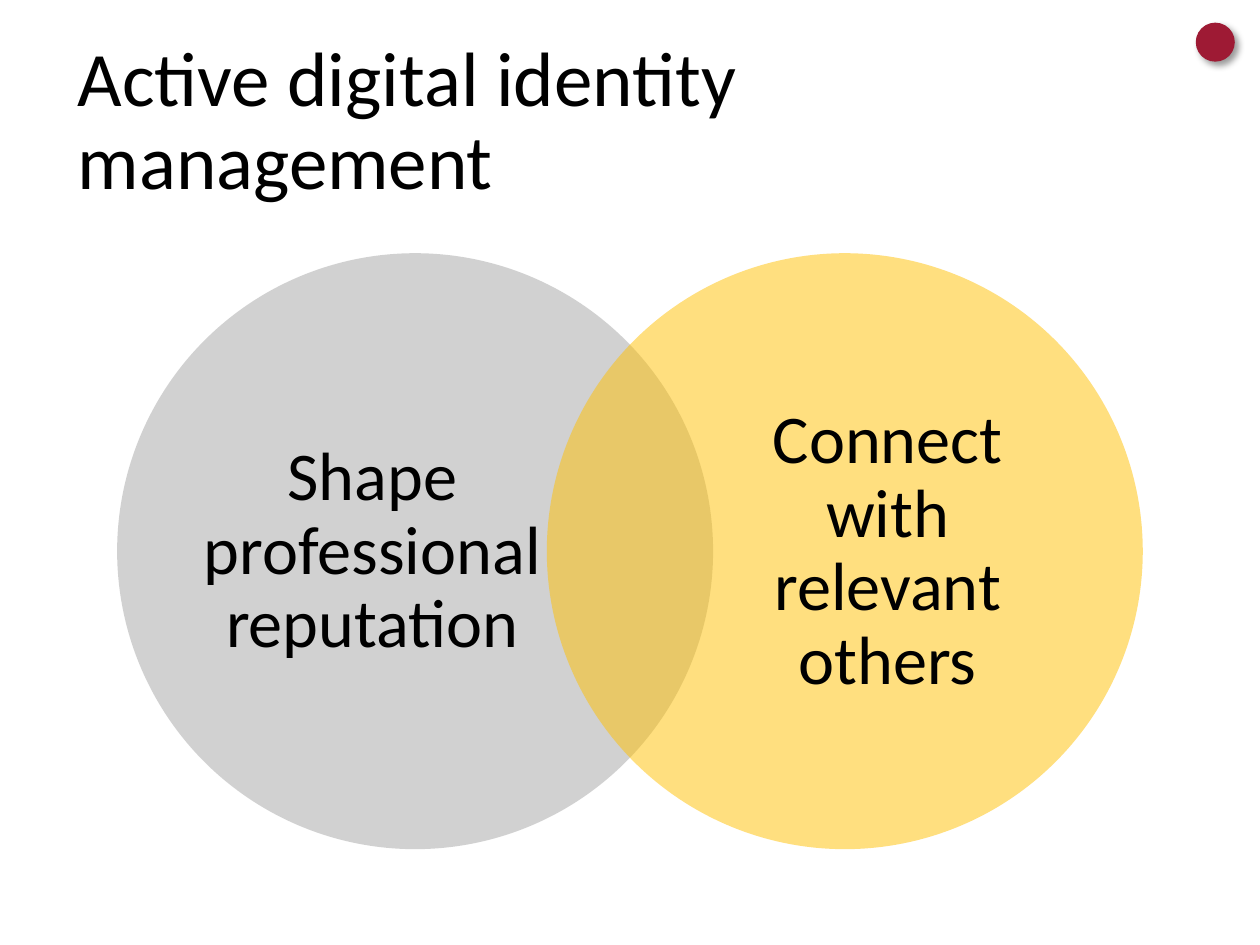
from lxml import etree
from pptx import Presentation
from pptx.dml.color import RGBColor as RGB
from pptx.enum.shapes import MSO_SHAPE as Shape
from pptx.enum.text import MSO_ANCHOR as Anchor, PP_ALIGN as Align
from pptx.oxml.ns import qn
from pptx.util import Inches, Pt

COLORS = {"text": "000000", "shape": "A5A5A5", "connect": "FFC000", "dot": "9E1A34"}


class Deck:
    font = "Calibri"

    def __init__(self, wide, high):
        self.prs = Presentation()
        self.prs.slide_width, self.prs.slide_height = Inches(wide), Inches(high)
        self.slide = self.prs.slides.add_slide(self.prs.slide_layouts[6])

    def text(self, words, box, size, align=Align.LEFT, inset=(0, 0)):
        frame = self.slide.shapes.add_textbox(*map(Inches, box)).text_frame
        frame.word_wrap = True
        frame.vertical_anchor = Anchor.MIDDLE
        frame.margin_left = frame.margin_right = Inches(inset[0])
        frame.margin_top = frame.margin_bottom = Inches(inset[1])
        para = frame.paragraphs[0]
        para.alignment = align
        para.line_spacing = 0.9
        run = para.add_run()
        run.text = words
        run.font.name, run.font.size = self.font, Pt(size)
        run.font.color.rgb = RGB.from_string(COLORS["text"])

    def circle(self, left, top, size, color, alpha=None):
        """Draw a borderless disc; alpha is its opacity in percent."""
        disc = self.slide.shapes.add_shape(
            Shape.OVAL, *map(Inches, (left, top, size, size)))
        disc.shadow.inherit = False
        disc.fill.solid()
        disc.fill.fore_color.rgb = RGB.from_string(COLORS[color])
        disc.line.fill.background()
        if alpha is not None:
            tone = disc.element.spPr.find(".//" + qn("a:solidFill"))[0]
            etree.SubElement(tone, qn("a:alpha"), val=str(alpha * 1000))
        return disc

    def shade(self, disc, alpha, blur, dist, angle):
        """Add an outer shadow: percent, points, points, degrees."""
        effects = disc.element.spPr.find(qn("a:effectLst"))
        outer = etree.SubElement(
            effects, qn("a:outerShdw"), blurRad=str(Pt(blur)), dist=str(Pt(dist)),
            dir=str(angle * 60000), algn="tl", rotWithShape="0")
        tone = etree.SubElement(outer, qn("a:srgbClr"), val=COLORS["text"])
        etree.SubElement(tone, qn("a:alpha"), val=str(alpha * 1000))


def main():
    deck = Deck(10, 7.5)
    deck.text("Active digital identity management", (0.52, 0.25, 8.79, 1.45), 44,
              inset=(0.1, 0.05))

    venn = [
        (0.93, "shape", 1.59, "Shape professional reputation"),
        (4.34, "connect", 5.68, "Connect with relevant others"),
    ]
    for left, color, start, words in venn:
        deck.circle(left, 2.01, 4.73, color, alpha=50)
        deck.text(words, (start, 2.57, 2.73, 3.62), 39, Align.CENTER)

    dot = deck.circle(9.49, 0.18, 0.31, "dot")
    deck.shade(dot, alpha=40, blur=4, dist=3, angle=45)
    deck.prs.save("out.pptx")


if __name__ == "__main__":
    main()
